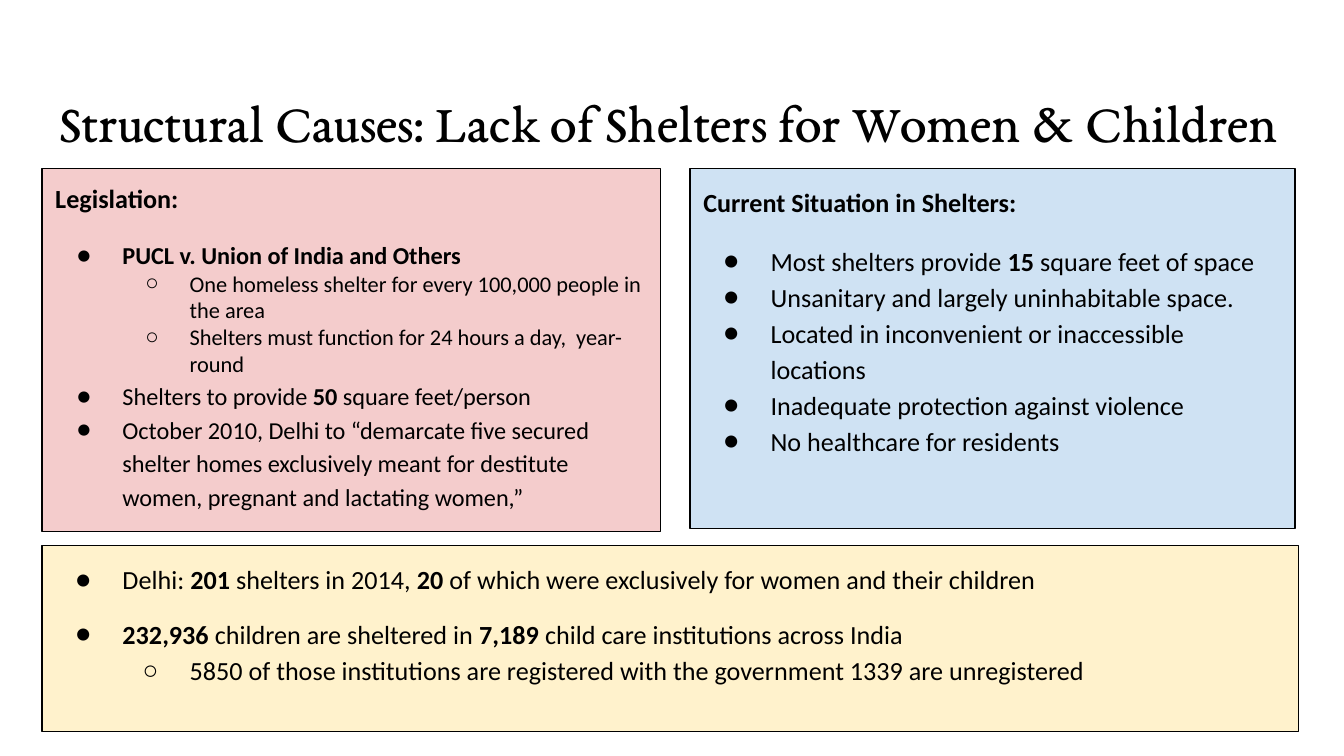
"""Build a slide on the lack of shelters for women and children."""
from dataclasses import dataclass

from lxml import etree
from pptx import Presentation
from pptx.dml.color import RGBColor
from pptx.enum.shapes import MSO_SHAPE
from pptx.enum.text import MSO_ANCHOR, MSO_AUTO_SIZE, PP_ALIGN
from pptx.oxml.ns import qn
from pptx.util import Inches, Pt

RECT = MSO_SHAPE.RECTANGLE
TOP = MSO_ANCHOR.TOP
LEFT = PP_ALIGN.LEFT
FIXED = MSO_AUTO_SIZE.NONE
WIDE = Inches(10)
HIGH = WIDE * 9 // 16
CELL = WIDE / 100
INK = "000000"
MARKS = (("●", "Calibri"), ("○", "Arial"))


@dataclass(frozen=True)
class Line:
    """A paragraph; words between asterisks are bold, level -1 has no bullet."""
    text: str
    size: float = 14
    level: int = 0
    lead: float = 1.15
    before: float = 0
    after: float = 0
    hang: float = 0.35


@dataclass(frozen=True)
class Panel:
    """A filled box, placed in grid cells."""
    left: float
    top: float
    width: float
    height: float
    fill: str
    lines: tuple[Line, ...]


PANELS = (
    Panel(3.13, 12.55, 46, 27, "F4CCCC", (
        Line("*Legislation:*", level=-1, lead=1, after=14.5),
        Line("*PUCL v. Union of India and Others*", 13, lead=1, hang=0.34),
        Line("One homeless shelter for every 100,000 people in the area",
             12, 1, lead=1, hang=0.33),
        Line("Shelters must function for 24 hours a day,  year-round",
             12, 1, lead=1, hang=0.33),
        Line("Shelters to provide *50* square feet/person", 13, hang=0.34),
        Line("October 2010, Delhi to “demarcate five secured shelter homes "
             "exclusively meant for destitute women, pregnant and lactating "
             "women,”", 13, hang=0.34),
    )),
    Panel(51.35, 12.55, 45, 26.8, "CFE2F3", (
        Line("*Current Situation in Shelters:*", level=-1),
        Line("Most shelters provide *15* square feet of space", before=12),
        Line("Unsanitary and largely uninhabitable space."),
        Line("Located in inconvenient or inaccessible locations"),
        Line("Inadequate protection against violence"),
        Line("No healthcare for residents"),
    )),
    Panel(3.13, 40.6, 93.5, 13.85, "FFF2CC", (
        Line("Delhi: *201* shelters in 2014, *20* of which were exclusively "
             "for women and their children"),
        Line("*232,936* children are sheltered in *7,189* child care "
             "institutions across India", before=10),
        Line("5850 of those institutions are registered with the government "
             "1339 are unregistered", level=1),
    )),
)


def tint(code: str) -> RGBColor:
    """Turn a hex string into a colour."""
    return RGBColor.from_string(code)


def grid(count: float) -> int:
    """Turn grid cells into a length."""
    return round(count * CELL)


def write(para, text: str, *, size: float, font: str = "Calibri",
          color: str = INK, lead: float = 1.15, before: float = 0,
          after: float = 0) -> None:
    """Fill a paragraph with runs in one format."""
    para.alignment = LEFT
    para.line_spacing = lead
    para.space_before, para.space_after = Pt(before), Pt(after)
    for index, part in enumerate(text.split("*")):
        if part:
            run = para.add_run()
            run.text = part
            run.font.size, run.font.name = Pt(size), font
            run.font.bold = index % 2 == 1
            run.font.color.rgb = tint(color)


def bullet(para, level: int, hang: float) -> None:
    """Give a paragraph its level, hanging indent and mark."""
    mark, font = MARKS[level]
    para.level = level
    props = para._p.get_or_add_pPr()
    props.set("marL", str(Inches(0.5 * (level + 1))))
    props.set("indent", str(-Inches(hang)))
    shade = etree.SubElement(props, qn("a:buClr"))
    etree.SubElement(shade, qn("a:srgbClr"), val=INK)
    etree.SubElement(props, qn("a:buFont"), typeface=font)
    etree.SubElement(props, qn("a:buChar"), char=mark)


def frame(shape):
    """Set up the text frame of a shape and return it."""
    body = shape.text_frame
    body.word_wrap, body.auto_size = True, FIXED
    body.vertical_anchor = TOP
    body.margin_left = body.margin_right = grid(1)
    body.margin_top = body.margin_bottom = grid(1)
    return body


def draw(slide, panel: Panel) -> None:
    """Draw one panel with its lines."""
    place = (panel.left, panel.top, panel.width, panel.height)
    box = slide.shapes.add_shape(RECT, *map(grid, place))
    box.shadow.inherit = False
    box.fill.solid()
    box.fill.fore_color.rgb = tint(panel.fill)
    box.line.color.rgb = tint(INK)
    box.line.width = Pt(0.75)
    body = frame(box)
    for index, line in enumerate(panel.lines):
        para = body.add_paragraph() if index else body.paragraphs[0]
        write(para, line.text, size=line.size, lead=line.lead,
              before=line.before, after=line.after)
        if line.level >= 0:
            bullet(para, line.level, line.hang)


def main() -> None:
    """Build and save the slide."""
    deck = Presentation()
    deck.slide_width, deck.slide_height = WIDE, HIGH
    slide = deck.slides.add_slide(deck.slide_layouts[5])
    title = slide.shapes.title
    title.left, title.top = grid(3.4), grid(4.85)
    title.width, title.height = grid(93.2), grid(6.3)
    write(frame(title).paragraphs[0],
          "Structural Causes: Lack of Shelters for Women & Children",
          size=29, font="EB Garamond")
    for panel in PANELS:
        draw(slide, panel)
    deck.save("out.pptx")


if __name__ == "__main__":
    main()
